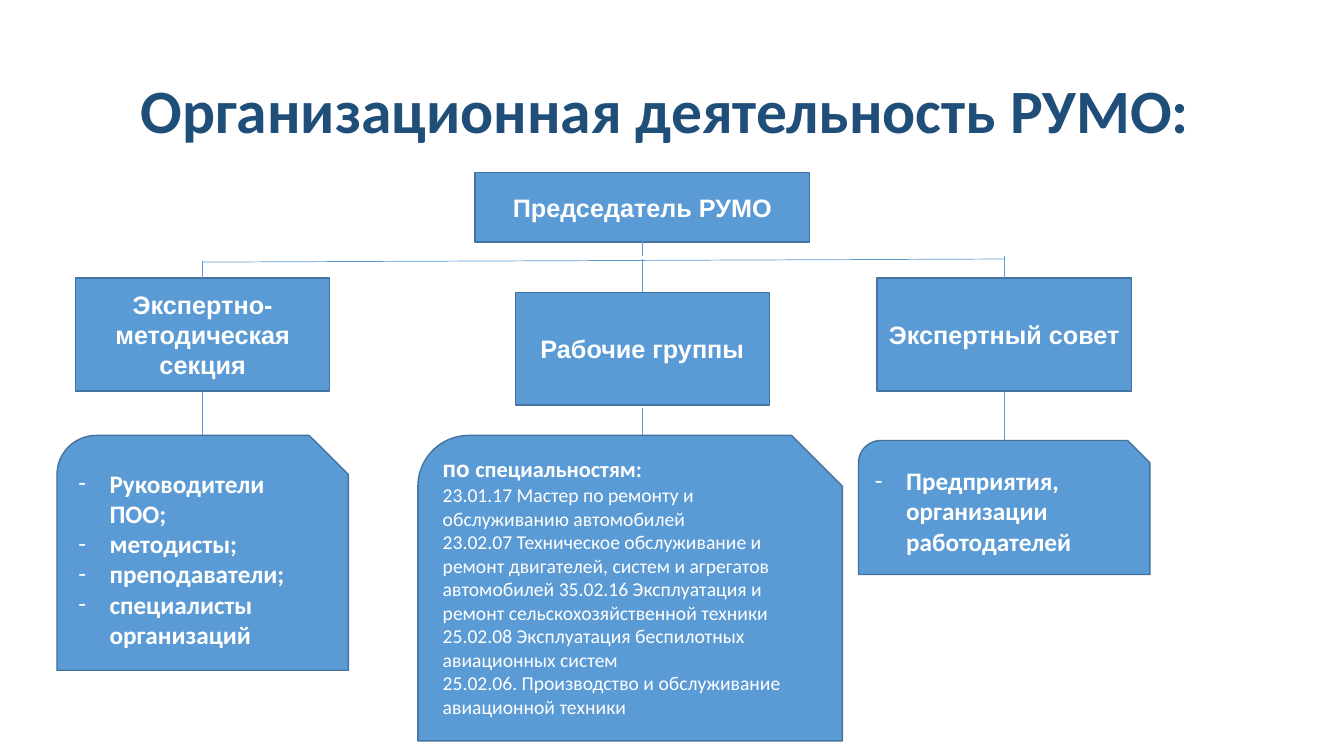
import pptx
import pptx.util
import pptx.dml.color
import pptx.enum.shapes
import pptx.enum.text
import pptx.oxml.ns
from lxml import etree

SHAPE = pptx.enum.shapes.MSO_SHAPE
ALIGN = pptx.enum.text.PP_ALIGN
inch = pptx.util.Inches

THEME = {
    "fill": "5B9BD5", "edge": "43739E", "line": "5B9BD5",
    "title": {"name": "Calibri", "size": 44, "bold": True, "color": "1F4E79"},
    "box": {"name": "Arial", "size": 18, "bold": True, "color": "FFFFFF"},
    "list": {"name": "Calibri", "size": 18, "bold": True, "color": "FFFFFF"},
    "head": {"name": "Calibri", "size": 16, "bold": True, "color": "FFFFFF"},
    "body": {"name": "Calibri", "size": 14, "bold": False, "color": "FFFFFF"},
}

# A paragraph is a list of (text, style) runs.
TITLE = [[("Организационная деятельность РУМО: ", "title")]]
CHAIR = "Председатель РУМО"
UNITS = ["Экспертно-методическая секция", "Рабочие группы", "Экспертный совет"]
STAFF = ["Руководители ПОО;", "методисты;", "преподаватели;",
         "специалисты организаций"]
FIRMS = ["Предприятия, организации работодателей"]
TRADES = [
    "23.01.17 Мастер по ремонту и обслуживанию автомобилей",
    "23.02.07 Техническое обслуживание и ремонт двигателей, систем и агрегатов "
    "автомобилей 35.02.16 Эксплуатация и ремонт сельскохозяйственной техники",
    "25.02.08 Эксплуатация беспилотных авиационных систем",
    "25.02.06. Производство и обслуживание авиационной техники",
]
GROUPS = [[("по ", "list"), ("специальностям:", "head")]]
GROUPS += [[(trade, "body")] for trade in TRADES]

# Grid in inches: column centres, row tops, sizes
COLS = [2.01, 6.37, 9.96]
TOPS = [2.76, 2.9, 2.76]
UNIT = (2.52, 1.12)
CHAIR_TOP, CHAIR_SIZE = 1.71, (3.32, 0.69)
BAR = [2.6, 2.58, 2.57]
STEMS = [(2.59, 2.76), (2.57, 2.9), (2.54, 2.76)]
DROPS = [(3.89, 4.32), (4.05, 4.32), (3.89, 4.37)]
INDENT = 0.31

# Notes: centre, top, size, paragraphs, bulleted, bottom inset
NOTES = [
    (COLS[0], 4.32, (2.89, 2.33), [[(t, "list")] for t in STAFF], True, 0.05),
    (6.25, 4.32, (4.21, 3.03), GROUPS, False, 0.25),
    (COLS[2], 4.37, (2.89, 1.33), [[(t, "list")] for t in FIRMS], True, 0.05),
]


def rgb(code):
    return pptx.dml.color.RGBColor.from_string(code)


def dash(para):
    """Give a paragraph a hanging dash bullet."""
    props = para._p.get_or_add_pPr()
    props.set("marL", str(inch(INDENT)))
    props.set("indent", str(-inch(INDENT)))
    for tag, key, value in (("a:buFont", "typeface", "Calibri"),
                            ("a:buChar", "char", "-")):
        etree.SubElement(props, pptx.oxml.ns.qn(tag)).set(key, value)


def write(shape, paras, align, bullet=False, foot=0.05):
    frame = shape.text_frame
    form = {"word_wrap": True, "margin_bottom": inch(foot),
            "vertical_anchor": pptx.enum.text.MSO_ANCHOR.MIDDLE}
    for key, value in form.items():
        setattr(frame, key, value)
    for i, runs in enumerate(paras):
        para = frame.add_paragraph() if i else frame.paragraphs[0]
        para.alignment = align
        if bullet:
            dash(para)
        for text, style in runs:
            run = para.add_run()
            run.text = text
            look = THEME[style]
            font = {"name": look["name"], "bold": look["bold"],
                    "size": pptx.util.Pt(look["size"])}
            for key, value in font.items():
                setattr(run.font, key, value)
            run.font.color.rgb = rgb(look["color"])


def block(slide, kind, mid, top, size, paras, align, **opts):
    """Add a filled shape centred on a column."""
    wide, high = size
    shape = slide.shapes.add_shape(kind, inch(mid - wide / 2), inch(top),
                                   inch(wide), inch(high))
    shape.shadow.inherit = False
    shape.fill.solid()
    shape.fill.fore_color.rgb = rgb(THEME["fill"])
    shape.line.color.rgb = rgb(THEME["edge"])
    shape.line.width = pptx.util.Pt(1)
    write(shape, paras, align, **opts)


def link(slide, x1, y1, x2, y2):
    line = slide.shapes.add_connector(
        pptx.enum.shapes.MSO_CONNECTOR.STRAIGHT, *map(inch, (x1, y1, x2, y2)))
    line.line.color.rgb = rgb(THEME["line"])
    line.line.width = pptx.util.Pt(0.5)
    etree.SubElement(line._element.spPr, pptx.oxml.ns.qn("a:effectLst"))


def main():
    deck = pptx.Presentation()
    deck.slide_width, deck.slide_height = inch(13.33), inch(7.5)
    slide = deck.slides.add_slide(deck.slide_layouts[6])

    title = slide.shapes.add_textbox(*map(inch, (0.92, 0.4, 11.5, 1.45)))
    write(title, TITLE, ALIGN.CENTER)
    title.text_frame.paragraphs[0].line_spacing = 0.9

    block(slide, SHAPE.RECTANGLE, COLS[1], CHAIR_TOP, CHAIR_SIZE,
          [[(CHAIR, "box")]], ALIGN.CENTER)
    for mid, top, name in zip(COLS, TOPS, UNITS):
        block(slide, SHAPE.RECTANGLE, mid, top, UNIT,
              [[(name, "box")]], ALIGN.CENTER)

    link(slide, COLS[1], 2.36, COLS[1], 2.54)
    link(slide, COLS[0], BAR[0], COLS[2], BAR[2])
    for mid, stem, drop in zip(COLS, STEMS, DROPS):
        for start, end in (stem, drop):
            link(slide, mid, start, mid, end)

    for mid, top, size, paras, bullet, foot in NOTES:
        block(slide, SHAPE.SNIP_ROUND_RECTANGLE, mid, top, size, paras,
              ALIGN.LEFT, bullet=bullet, foot=foot)
    deck.save("out.pptx")


if __name__ == "__main__":
    main()
